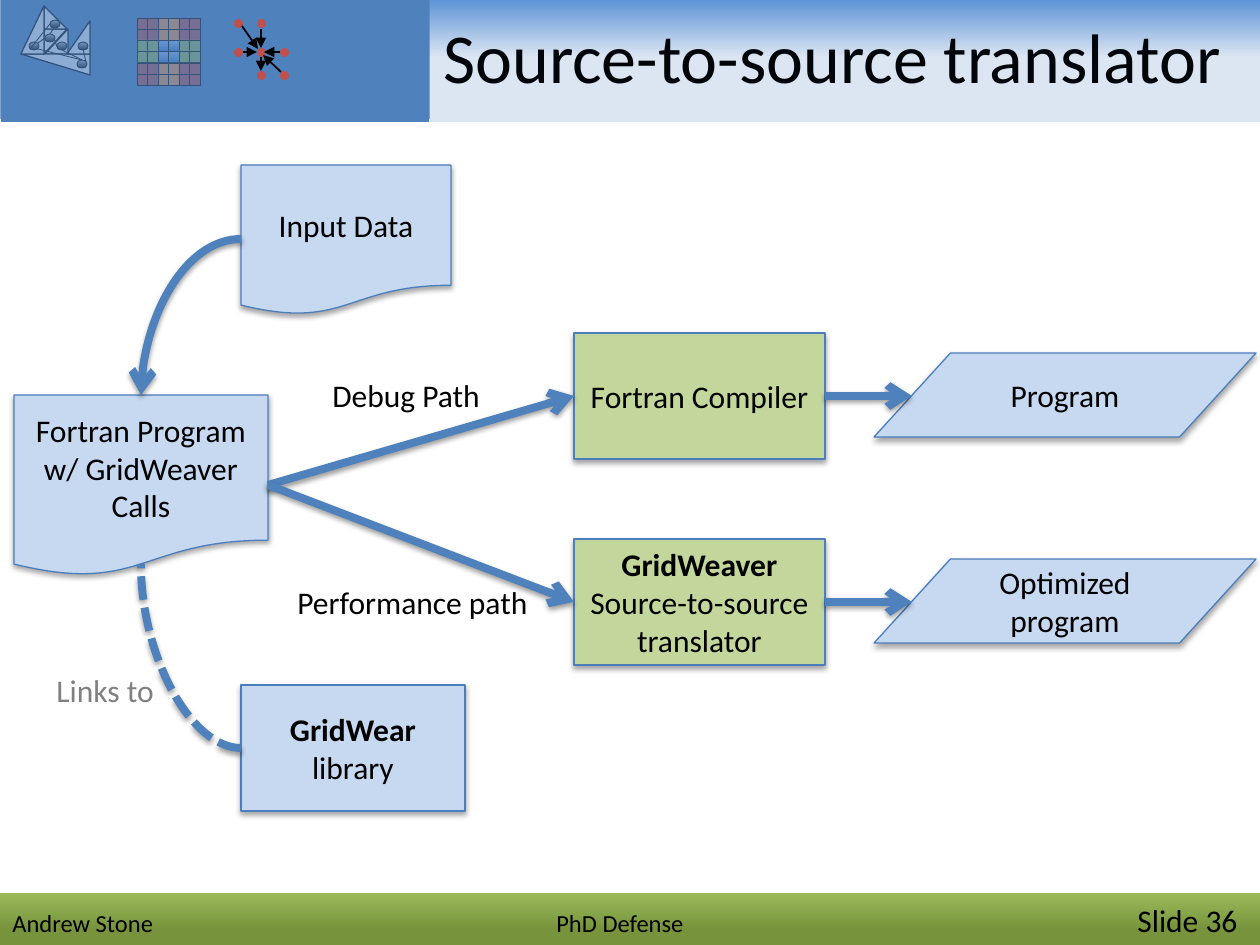
from itertools import product

from lxml.etree import SubElement
from pptx import Presentation
from pptx.dml.color import RGBColor
from pptx.enum.dml import MSO_LINE
from pptx.enum.shapes import MSO_CONNECTOR, MSO_SHAPE
from pptx.enum.text import MSO_ANCHOR, PP_ALIGN
from pptx.oxml.ns import qn
from pptx.util import Emu, Pt

BLACK = RGBColor(0x00, 0x00, 0x00)
WHITE = RGBColor(0xFF, 0xFF, 0xFF)
GRAY = RGBColor(0x80, 0x80, 0x80)
TITLE_INK = RGBColor(0x02, 0x05, 0x0A)
BLUE = RGBColor(0x4F, 0x81, 0xBD)
OUTLINE = RGBColor(0x4B, 0x7E, 0xBC)
PALE_BLUE = RGBColor(0xC6, 0xD9, 0xF1)
PALE_GREEN = RGBColor(0xC3, 0xD6, 0x9B)
RED = RGBColor(0xC0, 0x50, 0x4D)
ORANGE = RGBColor(0xF7, 0x96, 0x46)
GREEN = RGBColor(0x9B, 0xBB, 0x59)

# Vertical gradients: (position, color) from top to bottom
HEADER_FADE = ((0, RGBColor(0x55, 0x8E, 0xD5)), (0.49, RGBColor(0xDC, 0xE6, 0xF2)))
FOOTER_FADE = ((0, GREEN), (0.7, RGBColor(0x77, 0x93, 0x3C)))
BALL_FADE = ((0, RGBColor(0xBD, 0xBD, 0xBD)), (1, BLACK))
CELL_FADE = ((0, RGBColor(0xA4, 0xC4, 0xFF)), (1, RGBColor(0x3F, 0x80, 0xCE)))

WIDTH, HEIGHT = 1260, 945


def px(length):
    return Emu(round(length * 914400 / 126))


def add_text(paragraph, text, size=18, bold=False, color=BLACK, font="Calibri"):
    run = paragraph.add_run()
    run.text = text
    run.font.name = font
    run.font.size = Pt(size)
    run.font.bold = bold
    run.font.color.rgb = color


def set_shadow(shape, distance=None, opacity=35):
    effects = SubElement(shape._element.spPr, qn("a:effectLst"))
    if distance:
        shadow = SubElement(effects, qn("a:outerShdw"), blurRad="40000",
                            dist=str(distance), dir="5400000", rotWithShape="0")
        color = SubElement(shadow, qn("a:srgbClr"), val=str(BLACK))
        SubElement(color, qn("a:alpha"), val=str(opacity * 1000))


class Board:
    """Draws styled elements on the current slide or group."""

    def __init__(self, slide):
        self.slide = slide
        self.shapes = slide.shapes

    def start_group(self):
        self.shapes = self.slide.shapes.add_group_shape().shapes

    def end_group(self):
        self.shapes = self.slide.shapes

    def shape(self, kind, box, fill, line=None, line_width=0.75, flip="",
              opacity=100, shadow=None):
        shape = self.shapes.add_shape(kind, *map(px, box))
        if isinstance(fill, RGBColor):
            shape.fill.solid()
            shape.fill.fore_color.rgb = fill
        else:
            shape.fill.gradient()
            shape.fill.gradient_angle = 270
            for stop, (position, color) in zip(shape.fill.gradient_stops, fill):
                stop.position = position
                stop.color.rgb = color
        if opacity < 100:
            color = shape._element.spPr.find(".//" + qn("a:srgbClr"))
            SubElement(color, qn("a:alpha"), val=str(opacity * 1000))
        if line is None:
            shape.line.fill.background()
        else:
            shape.line.color.rgb = line
            shape.line.width = Pt(line_width)
        for axis in flip:
            shape._element.spPr.find(qn("a:xfrm")).set("flip" + axis, "1")
        set_shadow(shape, shadow)
        return shape

    def node(self, kind, box, fill, *paragraphs):
        """Flowchart node; each paragraph is a list of (text, bold) runs."""
        shape = self.shape(kind, box, fill, OUTLINE, shadow=23000)
        frame = shape.text_frame
        frame.vertical_anchor = MSO_ANCHOR.MIDDLE
        for index, runs in enumerate(paragraphs):
            paragraph = frame.add_paragraph() if index else frame.paragraphs[0]
            paragraph.alignment = PP_ALIGN.CENTER
            for text, bold in runs:
                add_text(paragraph, text, bold=bold)

    def line(self, ends, color=BLACK, width=0.5, head=None, curved=False,
             dash=None, shadow=None):
        kind = MSO_CONNECTOR.CURVE if curved else MSO_CONNECTOR.STRAIGHT
        connector = self.shapes.add_connector(kind, *map(px, ends))
        if curved:
            connector._element.spPr.find(qn("a:prstGeom")).set("prst", "curvedConnector2")
        connector.line.color.rgb = color
        connector.line.width = Pt(width)
        if dash:
            connector.line.dash_style = dash
        if head:
            SubElement(connector._element.spPr.find(qn("a:ln")), qn("a:tailEnd"), type=head)
        set_shadow(connector, shadow, 38)

    def flow(self, ends, head="arrow", **options):
        self.line(ends, BLUE, 4.5, head, shadow=20000, **options)

    def label(self, box, text, wrap=False, align=PP_ALIGN.LEFT,
              anchor=MSO_ANCHOR.TOP, **text_format):
        frame = self.shapes.add_textbox(*map(px, box)).text_frame
        frame.word_wrap = wrap
        frame.vertical_anchor = anchor
        frame.paragraphs[0].alignment = align
        add_text(frame.paragraphs[0], text, **text_format)


def draw_flowchart(board):
    document, data = MSO_SHAPE.FLOWCHART_DOCUMENT, MSO_SHAPE.FLOWCHART_DATA
    board.node(document, (14, 395, 254, 181), PALE_BLUE,
               [("Fortran Program w/ GridWeaver Calls", False)])
    board.node(document, (241, 165, 210, 150), PALE_BLUE, [("Input Data", False)])
    board.node(MSO_SHAPE.RECTANGLE, (241, 685, 224, 126), PALE_BLUE,
               [("GridWear ", True), ("library", False)])

    # The debug and performance paths share one row layout
    rows = (
        (396, "Program", [[("Fortran Compiler", False)]]),
        (602, "Optimized program",
         [[("GridWeaver", True)], [("Source-to-source translator", False)]]),
    )
    for middle, result, tool in rows:
        board.node(data, (874, middle - 43, 382, 84), PALE_BLUE, [(result, False)])
        board.node(MSO_SHAPE.RECTANGLE, (574, middle - 63, 251, 126), PALE_GREEN, *tool)
        board.flow((268, 485, 574, middle))
        board.flow((825, middle, 912, middle))

    board.flow((241, 239, 141, 395), curved=True)
    board.flow((241, 748, 141, 564), head=None, curved=True, dash=MSO_LINE.SQUARE_DOT)
    board.label((320, 370, 175, 50), "Debug Path")
    board.label((280, 577, 260, 50), "Performance path", align=PP_ALIGN.RIGHT)
    board.label((44, 665, 125, 50), "Links to", color=GRAY)


def draw_mesh_icon(board):
    board.start_group()
    triangles = (((45, 29, 23, 25), "H"), ((44, 29, 23, 25), "V"),
                 ((21, 54, 69, 21), "HV"), ((44, 6, 23, 23), ""),
                 ((21, 6, 23, 48), "H"), ((67, 21, 23, 33), "H"))
    for box, flip in triangles:
        board.shape(MSO_SHAPE.RIGHT_TRIANGLE, box, WHITE, BLACK, flip=flip)
    for x, y in ((77, 60), (57, 42), (50, 20), (45, 34), (78, 42), (29, 42)):
        board.shape(MSO_SHAPE.OVAL, (x, y, 10, 8), BALL_FADE, BLACK, 0.5)
    for ends in ((82, 60, 38, 49), (30, 49, 50, 24), (38, 43, 45, 38), (54, 28, 50, 34),
                 (54, 38, 57, 47), (82, 60, 62, 50), (86, 62, 83, 49)):
        board.line(ends)
    board.end_group()


def draw_stencil_icon(board):
    board.start_group()
    for x, y in ((257, 48), (257, 19), (280, 71), (280, 48), (257, 71), (234, 19), (234, 48)):
        board.shape(MSO_SHAPE.OVAL, (x, y, 9, 9), RED)
    for ends in ((261, 29, 261, 48), (242, 26, 258, 49), (243, 52, 257, 52),
                 (280, 52, 264, 52), (281, 72, 263, 55), (261, 57, 261, 71)):
        board.line(ends, width=1, head="triangle")
    board.end_group()


def draw_grid_icon(board):
    board.start_group()
    for row, column in product(range(6), repeat=2):
        outer, inner = (GREEN, CELL_FADE) if row in (2, 3) else (RED, ORANGE)
        box = (137 + column * 21 // 2, 18 + row * 45 // 4, 11, 11)
        board.shape(MSO_SHAPE.RECTANGLE, box, inner if column in (2, 3) else outer, BLACK, 0.25)
    board.end_group()


def draw_footer(board):
    footer = board.shape(MSO_SHAPE.RECTANGLE, (0, 893, WIDTH, 53), FOOTER_FADE)
    footer.text_frame.vertical_anchor = MSO_ANCHOR.MIDDLE
    paragraph = footer.text_frame.paragraphs[0]
    paragraph.alignment = PP_ALIGN.LEFT
    tabs = SubElement(paragraph._p.get_or_add_pPr(), qn("a:tabLst"))
    for position in (544, 1125):
        SubElement(tabs, qn("a:tab"), pos=str(px(position)), algn="l")
    add_text(paragraph, "Andrew Stone\tPhD Defense\t", size=14)
    add_text(paragraph, "Slide 36")


def main():
    presentation = Presentation()
    presentation.slide_width, presentation.slide_height = px(WIDTH), px(HEIGHT)
    board = Board(presentation.slides.add_slide(presentation.slide_layouts[6]))
    # Header background, then the diagram and the footer
    board.shape(MSO_SHAPE.RECTANGLE, (1, -4, WIDTH, 126), HEADER_FADE)
    draw_flowchart(board)
    draw_footer(board)
    # Header icons, dimmed by translucent panels
    board.shape(MSO_SHAPE.RECTANGLE, (1, -4, 428, 126), BLUE)
    draw_mesh_icon(board)
    draw_stencil_icon(board)
    draw_grid_icon(board)
    for box in ((-1, -4, 107, 123), (106, -1, 107, 123), (301, -4, 129, 123)):
        board.shape(MSO_SHAPE.RECTANGLE, box, BLUE, opacity=65)
    # Title
    board.label((431, -8, 850, 127), "Source-to-source translator", wrap=True,
                anchor=MSO_ANCHOR.MIDDLE, size=40, color=TITLE_INK)
    presentation.save("out.pptx")


if __name__ == "__main__":
    main()
